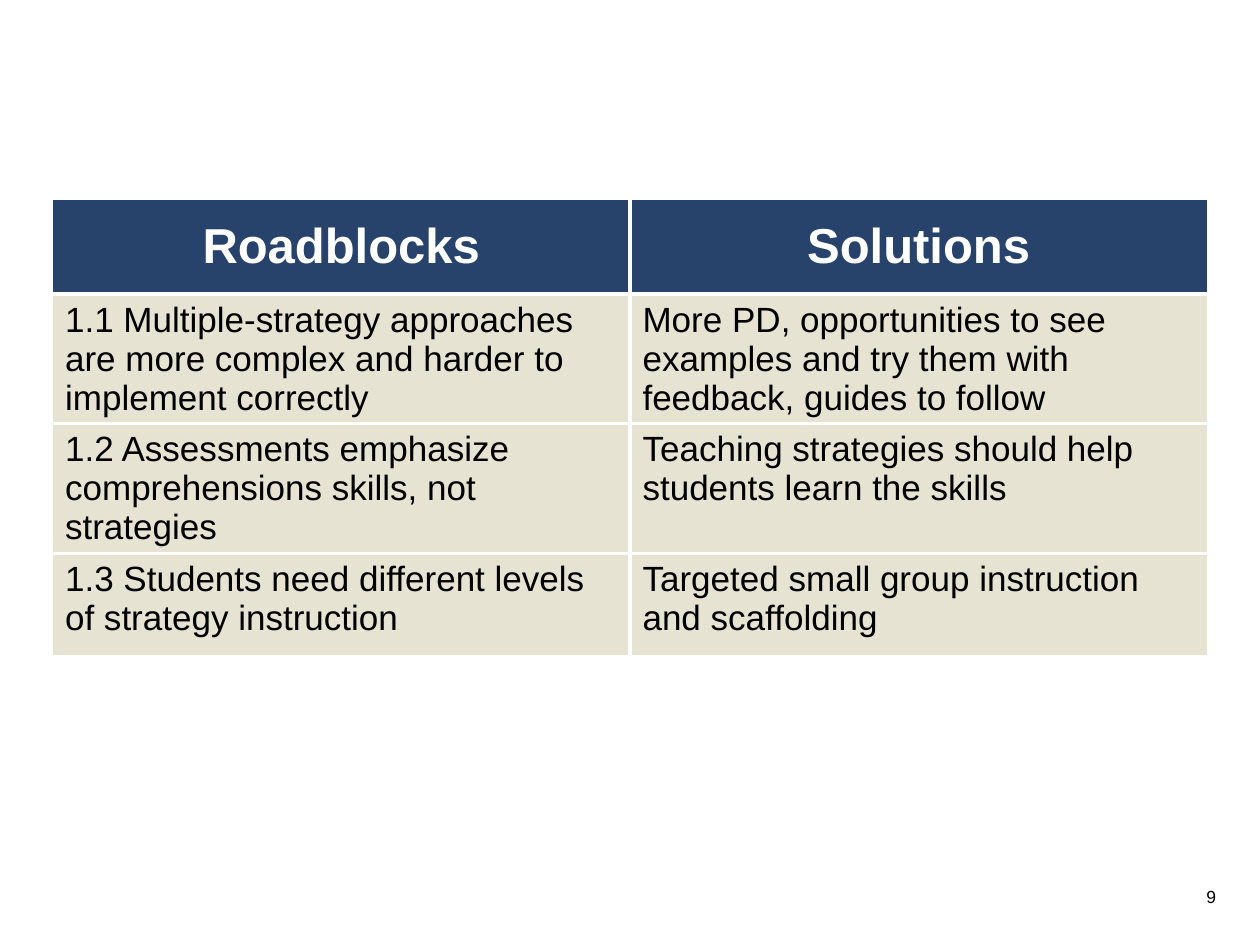
from dataclasses import dataclass

import pptx
import pptx.dml.color
import pptx.enum.text
import pptx.oxml
import pptx.oxml.ns
import pptx.util
from lxml import etree

Pt = pptx.util.Pt
RGBColor = pptx.dml.color.RGBColor
PP_ALIGN = pptx.enum.text.PP_ALIGN
MSO_ANCHOR = pptx.enum.text.MSO_ANCHOR

NAVY = RGBColor(0x27, 0x43, 0x6C)
SAND = RGBColor(0xE6, 0xE3, 0xD2)
WHITE = RGBColor(0xFF, 0xFF, 0xFF)
BLACK = RGBColor(0x00, 0x00, 0x00)
FONT = "Arial"
COLUMN_WIDTH = 330
OUTER_LINE = 1
INNER_LINE = 2.25


@dataclass(frozen=True)
class Row:
    roadblock: str
    solution: str
    height: float
    heading: bool = False


ROWS = [
    Row("Roadblocks", "Solutions", 54, heading=True),
    Row("1.1 Multiple-strategy approaches are more complex and harder to implement correctly",
        "More PD, opportunities to see examples and try them with feedback, guides to follow", 66),
    Row("1.2 Assessments emphasize comprehensions skills, not strategies",
        "Teaching strategies should help students learn the skills", 66),
    Row("1.3 Students need different levels of strategy instruction",
        "Targeted small group instruction and scaffolding", 58.5),
]


def write_text(frame, text: str, *, size: float, color: RGBColor = BLACK,
               bold: bool = False, align=PP_ALIGN.LEFT) -> None:
    paragraph = frame.paragraphs[0]
    paragraph.alignment = align
    run = paragraph.add_run()
    run.text = text
    run.font.name = FONT
    run.font.size = Pt(size)
    run.font.bold = bold
    run.font.color.rgb = color


def add_borders(cell, widths: dict[str, float]) -> None:
    properties = cell._tc.get_or_add_tcPr()
    for position, (side, width) in enumerate(widths.items()):
        border = etree.Element(pptx.oxml.ns.qn(f"a:{side}"), w=str(Pt(width)))
        fill = etree.SubElement(border, pptx.oxml.ns.qn("a:solidFill"))
        etree.SubElement(fill, pptx.oxml.ns.qn("a:srgbClr"), val=str(WHITE))
        properties.insert(position, border)


def fill_row(table, index: int, row: Row) -> None:
    table.rows[index].height = Pt(row.height)
    for column, text in enumerate((row.roadblock, row.solution)):
        cell = table.cell(index, column)
        cell.fill.solid()
        cell.fill.fore_color.rgb = NAVY if row.heading else SAND
        if row.heading:
            cell.vertical_anchor = MSO_ANCHOR.MIDDLE
            write_text(cell.text_frame, text, size=28, color=WHITE, bold=True,
                       align=PP_ALIGN.CENTER)
        else:
            write_text(cell.text_frame, text, size=20)
        add_borders(cell, {
            "lnL": OUTER_LINE if column == 0 else INNER_LINE,
            "lnR": INNER_LINE if column == 0 else OUTER_LINE,
            "lnT": OUTER_LINE if index == 0 else INNER_LINE,
            "lnB": OUTER_LINE if index == len(ROWS) - 1 else INNER_LINE,
        })


def main() -> None:
    deck = pptx.Presentation()
    deck.slide_width, deck.slide_height = Pt(720), Pt(540)
    slide = deck.slides.add_slide(deck.slide_layouts[6])

    strategies = slide.shapes.add_table(
        len(ROWS), 2, Pt(30), Pt(114), Pt(2 * COLUMN_WIDTH),
        Pt(sum(row.height for row in ROWS))).table
    for column in strategies.columns:
        column.width = Pt(COLUMN_WIDTH)
    for index, row in enumerate(ROWS):
        fill_row(strategies, index, row)

    page_number = slide.shapes.add_textbox(Pt(672), Pt(502.5), Pt(30), Pt(19.5)).text_frame
    page_number.word_wrap = True
    write_text(page_number, "9", size=10, align=PP_ALIGN.RIGHT)

    deck.save("out.pptx")


if __name__ == "__main__":
    main()
